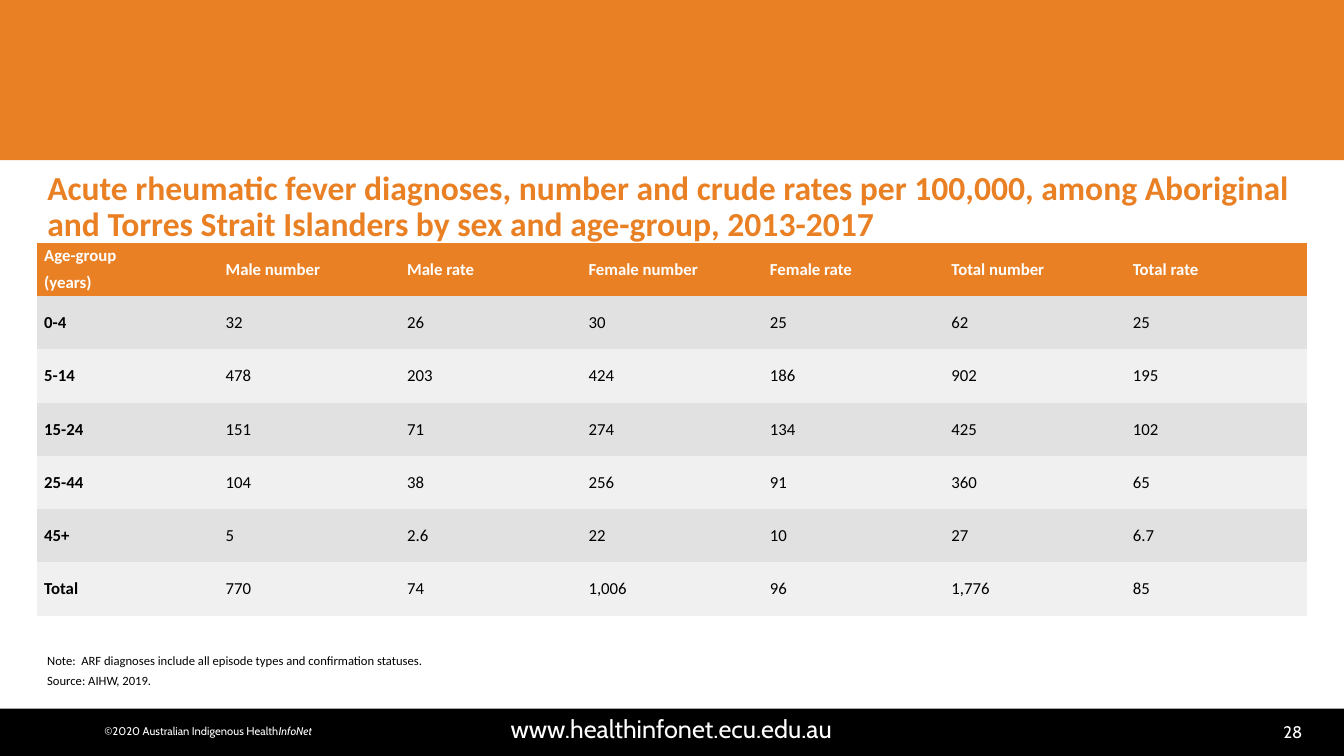
from pptx import Presentation
from pptx.dml.color import RGBColor
from pptx.enum.shapes import MSO_SHAPE
from pptx.enum.text import MSO_ANCHOR, MSO_AUTO_SIZE, PP_ALIGN
from pptx.oxml.ns import qn
from pptx.util import Pt

RECTANGLE = MSO_SHAPE.RECTANGLE
TOP, MIDDLE = MSO_ANCHOR.TOP, MSO_ANCHOR.MIDDLE
LEFT, CENTER, RIGHT = PP_ALIGN.LEFT, PP_ALIGN.CENTER, PP_ALIGN.RIGHT
NO_AUTOFIT = MSO_AUTO_SIZE.NONE

ORANGE = RGBColor(0xEA, 0x80, 0x24)
BLACK = RGBColor(0, 0, 0)
WHITE = RGBColor(0xFF, 0xFF, 0xFF)
DARK_STRIPE = RGBColor(0xE1, 0xE1, 0xE1)
LIGHT_STRIPE = RGBColor(0xF0, 0xF0, 0xF0)

BODY_FONT, FOOTER_FONT = "Calibri", "Cabin"
PLAIN_TABLE_STYLE = "{2D5ABB26-0587-4C30-8999-92F81FD0307C}"
TITLE_ONLY = 5

TITLE = ("Acute rheumatic fever diagnoses, number and crude rates per 100,000, among "
         "Aboriginal and Torres Strait Islanders by sex and age-group, 2013-2017")
DIAGNOSES = [
    ["Age-group\n(years)", "Male number", "Male rate", "Female number",
     "Female rate", "Total number", "Total rate"],
    ["0-4", "32", "26", "30", "25", "62", "25"],
    ["5-14", "478", "203", "424", "186", "902", "195"],
    ["15-24", "151", "71", "274", "134", "425", "102"],
    ["25-44", "104", "38", "256", "91", "360", "65"],
    ["45+", "5", "2.6", "22", "10", "27", "6.7"],
    ["Total", "770", "74", "1,006", "96", "1,776", "85"],
]


def apply(target, formats):
    for name, value in formats.items():
        setattr(target, name, value)


class StyledSlide:
    def __init__(self, deck):
        self.slide = deck.slides.add_slide(deck.slide_layouts[TITLE_ONLY])

    def fill_text(self, frame, paragraphs, size, color, font=BODY_FONT, bold=False, **layout):
        """Fill a text frame; each paragraph is a list of (text, italic) runs."""
        for number, runs in enumerate(paragraphs):
            paragraph = frame.paragraphs[0] if number == 0 else frame.add_paragraph()
            apply(paragraph, {"alignment": LEFT, "space_before": Pt(0), **layout})
            for text, italic in runs:
                run = paragraph.add_run()
                run.text = text
                apply(run.font, {"name": font, "size": Pt(size), "bold": bold, "italic": italic})
                run.font.color.rgb = color

    def band(self, left, top, width, height, color):
        band = self.slide.shapes.add_shape(RECTANGLE, Pt(left), Pt(top), Pt(width), Pt(height))
        band.shadow.inherit = False
        band.fill.solid()
        band.fill.fore_color.rgb = color
        band.line.fill.background()

    def title(self, left, top, width, height, text):
        title = self.slide.shapes.title
        apply(title, {"left": Pt(left), "top": Pt(top), "width": Pt(width), "height": Pt(height)})
        apply(title.text_frame, {"auto_size": NO_AUTOFIT, "word_wrap": True,
                                 "vertical_anchor": TOP})
        self.fill_text(title.text_frame, [[(text, False)]], 24, ORANGE,
                       bold=True, line_spacing=0.9)

    def text(self, left, top, width, height, paragraphs, size, color,
             anchor=TOP, wrap=True, **style):
        box = self.slide.shapes.add_textbox(Pt(left), Pt(top), Pt(width), Pt(height))
        apply(box.text_frame, {"word_wrap": wrap, "vertical_anchor": anchor})
        self.fill_text(box.text_frame, paragraphs, size, color, **style)

    def table(self, left, top, width, height, rows):
        table = self.slide.shapes.add_table(
            len(rows), len(rows[0]), Pt(left), Pt(top), Pt(width), Pt(height)).table
        table._tbl.tblPr.find(qn("a:tableStyleId")).text = PLAIN_TABLE_STYLE
        for row_number, row in enumerate(rows):
            header = row_number == 0
            stripe = DARK_STRIPE if row_number % 2 else LIGHT_STRIPE
            for column, value in enumerate(row):
                cell = table.cell(row_number, column)
                apply(cell, {"vertical_anchor": MIDDLE, "margin_left": Pt(5),
                             "margin_right": Pt(5), "margin_top": 0, "margin_bottom": 0})
                cell.fill.solid()
                cell.fill.fore_color.rgb = ORANGE if header else stripe
                self.fill_text(cell.text_frame, [[(line, False)] for line in value.split("\n")],
                               12, WHITE if header else BLACK,
                               bold=header or column == 0, space_after=Pt(5))


def main():
    deck = Presentation()
    apply(deck, {"slide_width": Pt(960), "slide_height": Pt(540)})
    page = StyledSlide(deck)

    page.band(-2, 0, 962, 114.5, ORANGE)
    page.band(0, 506.2, 960, 33.8, BLACK)
    page.text(860.4, 511.9, 77, 21.6, [[("28", False)]], 12, WHITE,
              anchor=MIDDLE, font=FOOTER_FONT, alignment=RIGHT)
    page.text(44.6, 506.2, 869.8, 28, [[("www.healthinfonet.ecu.edu.au", False)]], 18, WHITE,
              font=FOOTER_FONT, alignment=CENTER)
    page.text(66.2, 514.1, 165, 17.3,
              [[("©2020 Australian Indigenous Health", False), ("InfoNet", True)]], 8, WHITE,
              wrap=False, font=FOOTER_FONT, alignment=CENTER)

    page.title(26.6, 118.8, 907.2, 60.5, TITLE)
    page.table(26.6, 173.5, 907.2, 266.4, DIAGNOSES)
    page.text(26.6, 463, 480, 32.4,
              [[("Note:  ARF diagnoses include all episode types and confirmation statuses.", False)],
               [("Source: AIHW, 2019.", False)]],
              9, BLACK, space_after=Pt(3))

    deck.save("out.pptx")


if __name__ == "__main__":
    main()
